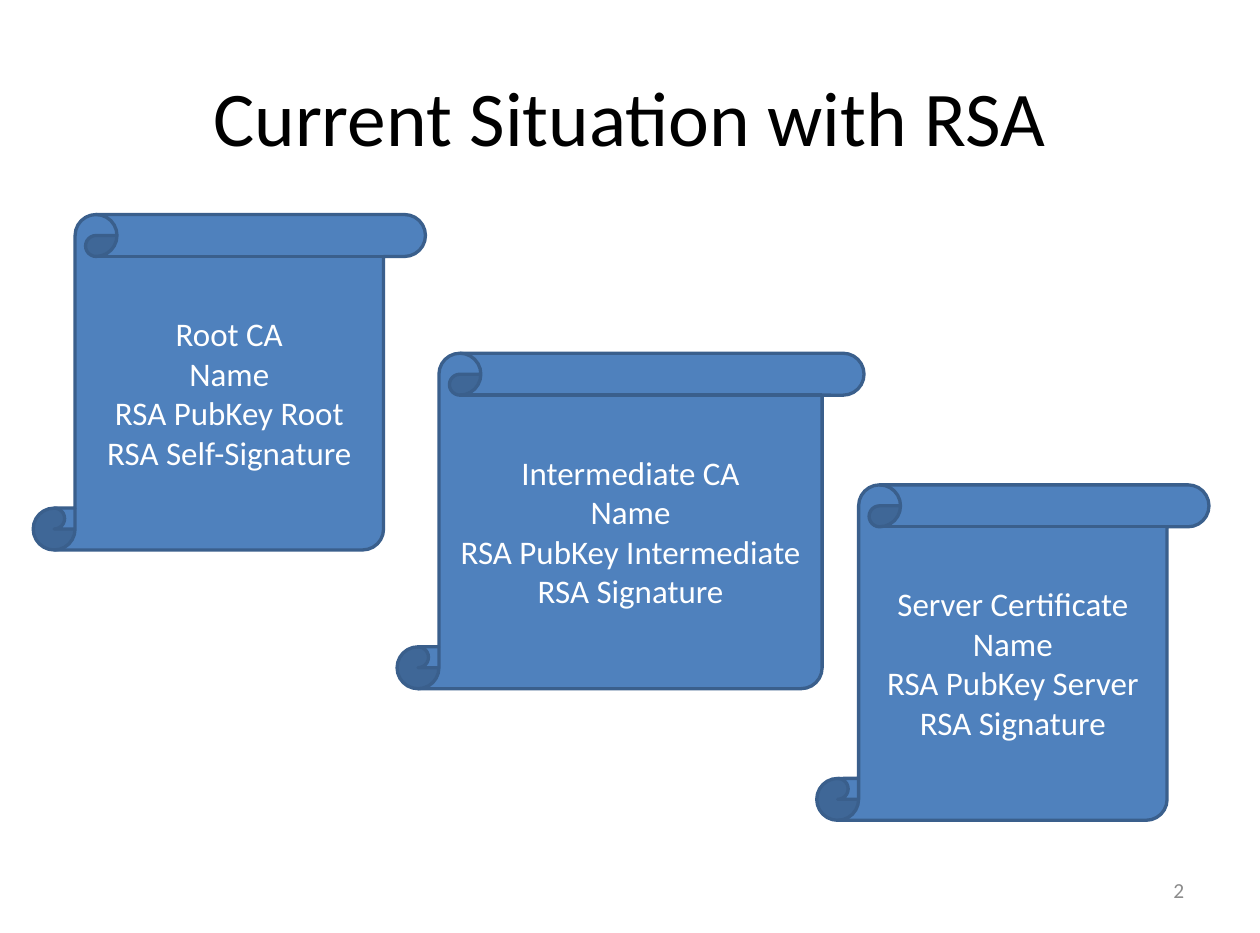
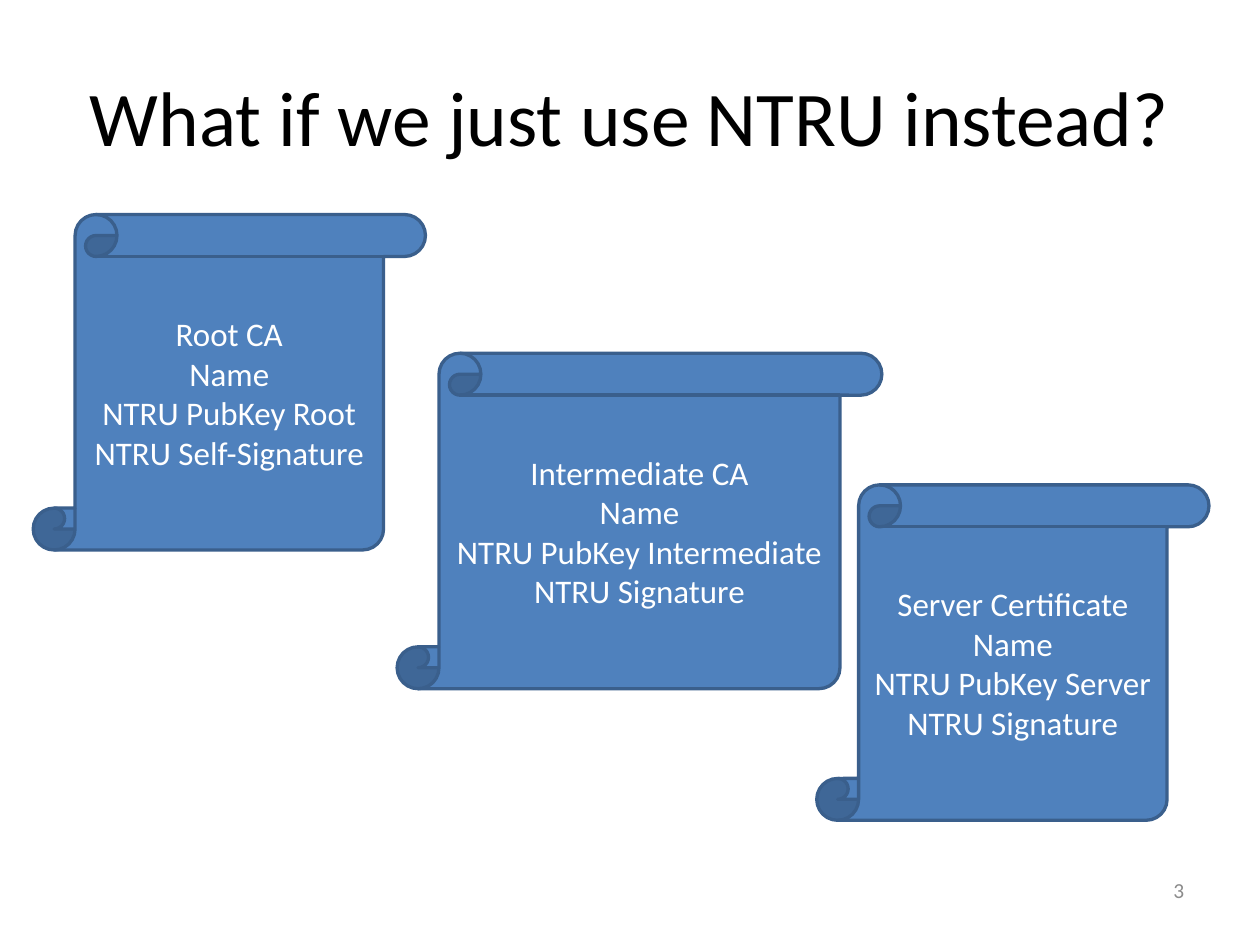
from pptx import Presentation
from pptx.dml.color import RGBColor
from pptx.enum.shapes import MSO_SHAPE
from pptx.enum.text import MSO_ANCHOR, PP_ALIGN
from pptx.util import Inches, Pt

FONT = "Calibri"
BLACK, WHITE, GREY = "000000", "FFFFFF", "8C8C8C"
BLUE, DARK_BLUE = "4F81BD", "3A5F8C"
SCROLL_WIDTH, SCROLL_HEIGHT = 3.31, 2.83


def color(value):
    return RGBColor.from_string(value)


def write(shape, lines, size=20, fill=WHITE, align=PP_ALIGN.CENTER, margin=0.1):
    """Put one paragraph per line into the shape, centred vertically."""
    tf = shape.text_frame
    tf.word_wrap = True
    tf.vertical_anchor = MSO_ANCHOR.MIDDLE
    tf.margin_left = tf.margin_right = Inches(margin)
    tf.margin_top = tf.margin_bottom = Inches(0.05)
    for i, line in enumerate(lines):
        p = tf.add_paragraph() if i else tf.paragraphs[0]
        p.alignment = align
        r = p.add_run()
        r.text = line
        r.font.name = FONT
        r.font.size = Pt(size)
        r.font.color.rgb = color(fill)


def add_text(s, box, text, **style):
    write(s.shapes.add_textbox(*map(Inches, box)), [text], margin=0.11, **style)


def add_certificate(s, left, top, lines, width=SCROLL_WIDTH):
    sp = s.shapes.add_shape(MSO_SHAPE.VERTICAL_SCROLL, Inches(left), Inches(top),
                            Inches(width), Inches(SCROLL_HEIGHT))
    sp.shadow.inherit = False
    sp.fill.solid()
    sp.fill.fore_color.rgb = color(BLUE)
    sp.line.color.rgb = color(DARK_BLUE)
    sp.line.width = Pt(2)
    write(sp, lines)


def add_chain_slide(prs, number, title, scheme, middle_width):
    """Show a certificate chain whose keys and signatures use one scheme."""
    s = prs.slides.add_slide(prs.slide_layouts[6])
    add_text(s, (0.53, 0.32, 9.57, 1.31), title, size=47, fill=BLACK)
    add_text(s, (7.62, 7.3, 2.48, 0.42), str(number), size=13, fill=GREY,
             align=PP_ALIGN.RIGHT)
    chain = [
        (0.28, 1.81, SCROLL_WIDTH, "Root CA", "Root", "Self-Signature"),
        (3.35, 2.98, middle_width, "Intermediate CA", "Intermediate", "Signature"),
        (6.89, 4.09, SCROLL_WIDTH, "Server Certificate", "Server", "Signature"),
    ]
    for left, top, width, heading, owner, signature in chain:
        lines = [heading, "Name", f"{scheme} PubKey {owner}", f"{scheme} {signature}"]
        add_certificate(s, left, top, lines, width)


def main():
    prs = Presentation()
    prs.slide_width, prs.slide_height = Inches(10.63), Inches(7.87)
    add_chain_slide(prs, 2, "Current Situation with RSA", "RSA", 3.94)
    add_chain_slide(prs, 3, "What if we just use NTRU instead?", "NTRU", 4.09)
    prs.save("out.pptx")


if __name__ == "__main__":
    main()
